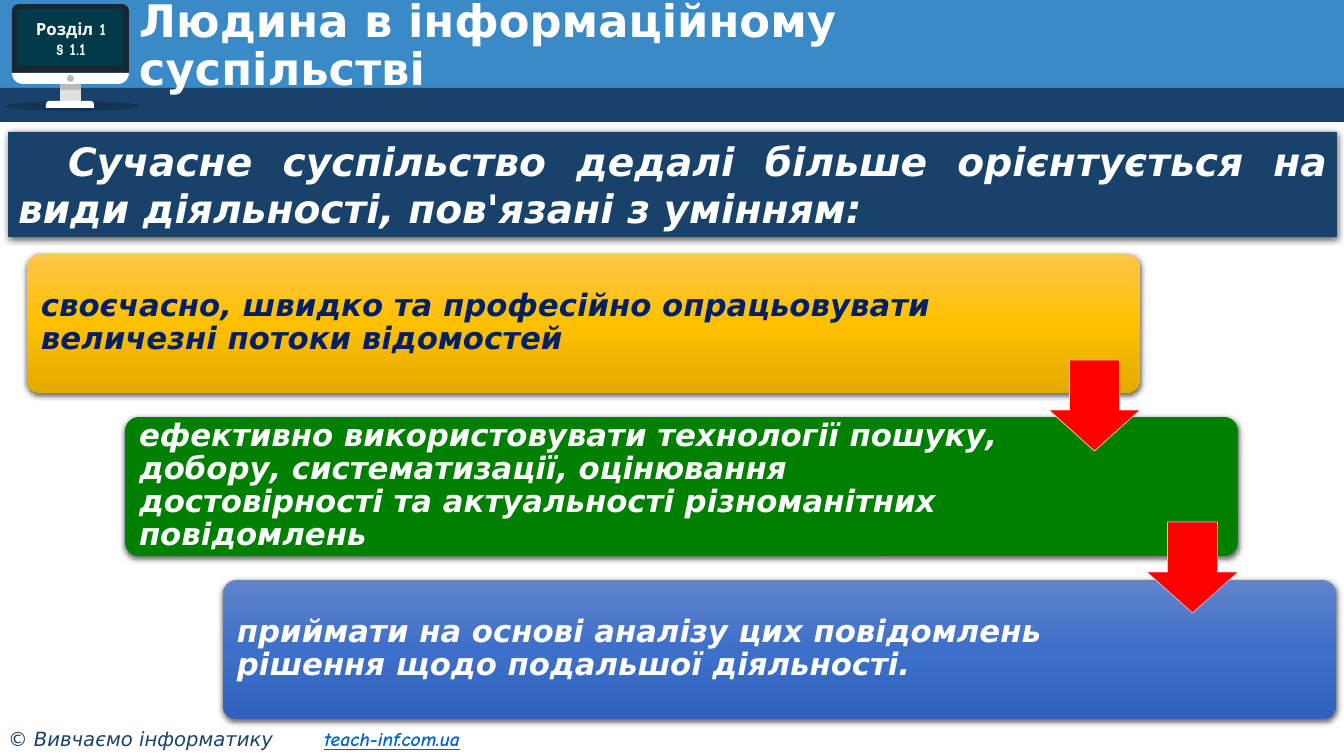
from math import cos, pi, sin

from lxml.etree import SubElement
from pptx import Presentation
from pptx.dml.color import RGBColor
from pptx.enum.shapes import MSO_SHAPE
from pptx.enum.text import MSO_ANCHOR, PP_ALIGN
from pptx.oxml.ns import qn
from pptx.util import Pt

PX = 9144000 / 1008
WIDTH, HEIGHT = 1344, 756

WHITE = RGBColor(0xFF, 0xFF, 0xFF)
BLACK = RGBColor(0x00, 0x00, 0x00)
SKY = RGBColor(0x39, 0x8A, 0xC7)
NAVY = RGBColor(0x19, 0x42, 0x6B)
INK = RGBColor(0x00, 0x20, 0x60)
BEZEL = RGBColor(0x18, 0x26, 0x32)
GLASS = RGBColor(0x00, 0x39, 0x48)
SILVER = RGBColor(0xE1, 0xE1, 0xE1)
GREY = RGBColor(0xBB, 0xBB, 0xBB)
LINK = RGBColor(0x05, 0x63, 0xC1)
GREEN = RGBColor(0x00, 0x80, 0x00)
RED = RGBColor(0xFF, 0x00, 0x00)
CREAM = RGBColor(0xFF, 0xE8, 0xCC)
MIST = RGBColor(0xCF, 0xD6, 0xEA)
GOLD = [RGBColor(0xFF, 0xC6, 0x4B), RGBColor(0xFF, 0xC0, 0x00), RGBColor(0xE3, 0xAB, 0x00)]
BLUE = [RGBColor(0x61, 0x83, 0xCB), RGBColor(0x3E, 0x70, 0xCA), RGBColor(0x30, 0x62, 0xBB)]


def px(length):
    return round(length * PX)


def add_alpha(color, percent):
    SubElement(color, qn("a:alpha"), val=str(percent * 1000))


def write(para, text, size, color, font="DejaVu Sans", bold=False, italic=False, underline=False):
    """Append one formatted span to a paragraph."""
    span = para.add_run()
    span.text = text
    span.font.name = font
    span.font.size = Pt(size)
    span.font.color.rgb = color
    span.font.bold = bold
    span.font.italic = italic
    span.font.underline = underline


class SlideBuilder:
    heading = dict(bold=True, color=WHITE)
    statement = dict(bold=True, italic=True)
    monitor_label = dict(size=12, color=WHITE, font="Comic Neue", bold=True)

    def __init__(self, page):
        self.page = page

    def shape(self, kind, left, top, width, height, fill, adjust=(), alpha=None):
        shape = self.page.shapes.add_shape(kind, px(left), px(top), px(width), px(height))
        for index, value in enumerate(adjust):
            shape.adjustments[index] = value
        self.paint(shape, fill)
        if alpha:
            add_alpha(shape._element.spPr.find(".//" + qn("a:srgbClr")), alpha)
        return shape

    def paint(self, shape, fill):
        """Fill with one colour, or with a gradient for a list of colours."""
        if isinstance(fill, list):
            self.gradient(shape, fill)
        else:
            shape.fill.solid()
            shape.fill.fore_color.rgb = fill
        shape.line.fill.background()
        shape.shadow.inherit = False

    def gradient(self, shape, colors):
        """Fill from top to bottom with evenly spaced colours."""
        shape.fill.gradient()
        shape.fill.gradient_angle = 270
        stops = shape._element.spPr.find(".//" + qn("a:gsLst"))
        for stop in list(stops):
            stops.remove(stop)
        for index, color in enumerate(colors):
            position = 100000 * index // (len(colors) - 1)
            stop = SubElement(stops, qn("a:gs"), pos=str(position))
            SubElement(stop, qn("a:srgbClr"), val=str(color))

    def drop_shadow(self, shape):
        effects = shape._element.spPr.find(qn("a:effectLst"))
        shadow = SubElement(effects, qn("a:outerShdw"), blurRad=str(Pt(4.5)), dist=str(Pt(1.5)),
                            dir="5400000", algn="ctr", rotWithShape="0")
        add_alpha(SubElement(shadow, qn("a:srgbClr"), val=str(BLACK)), 63)

    def frame(self, shape, anchor=MSO_ANCHOR.MIDDLE, insets=(10, 5, 10, 5), align=PP_ALIGN.LEFT):
        """Prepare the text frame and return its first paragraph."""
        frame = shape.text_frame
        frame.word_wrap = True
        frame.vertical_anchor = anchor
        (frame.margin_left, frame.margin_top,
         frame.margin_right, frame.margin_bottom) = map(px, insets)
        para = frame.paragraphs[0]
        para.alignment = align
        return para

    def text_box(self, left, top, width, height, **layout):
        box = self.page.shapes.add_textbox(px(left), px(top), px(width), px(height))
        return box, self.frame(box, **layout)

    def chin(self, left, top, width, radius):
        """Draw a bar whose lower corners are quarter circles of its full height."""
        angles = [step * pi / 16 for step in range(9)]
        right = left + width
        corners = [(right - radius + radius * cos(a), top + radius * sin(a)) for a in angles]
        corners += [(left + radius - radius * sin(a), top + radius * cos(a)) for a in angles]
        outline = self.page.shapes.build_freeform(px(left), px(top))
        outline.add_line_segments([(px(x), px(y)) for x, y in corners], close=True)
        self.paint(outline.convert_to_shape(), WHITE)

    def monitor(self, lines):
        rounded = MSO_SHAPE.ROUND_2_SAME_RECTANGLE
        self.shape(MSO_SHAPE.OVAL, 5, 101, 135, 10, BLACK, alpha=20)
        self.shape(rounded, 12, 4, 117, 69, BEZEL, (0.1, 0))
        self.chin(12, 73, 117, 11)
        self.shape(MSO_SHAPE.RECTANGLE, 60, 84, 21, 17, SILVER)
        self.shape(MSO_SHAPE.RECTANGLE, 60, 84, 21, 6, GREY)
        self.shape(rounded, 46, 101, 48, 7, WHITE, (0.5, 0))
        self.shape(MSO_SHAPE.OVAL, 67, 75, 7, 7, GREY)
        self.shape(MSO_SHAPE.ROUNDED_RECTANGLE, 17, 9, 106, 57, GLASS, (0.04,))
        box, para = self.text_box(13, 9, 116, 60, align=PP_ALIGN.CENTER)
        write(para, lines[0], **self.monitor_label)
        for line in lines[1:]:
            para = box.text_frame.add_paragraph()
            para.alignment = PP_ALIGN.CENTER
            write(para, line, **self.monitor_label)

    def title(self, text):
        para = self.text_box(129, 18, 998, 58)[1]
        para.line_spacing = 0.9
        write(para, text, size=32, **self.heading)

    def footer(self, owner, address):
        para = self.text_box(0, 722, 525, 34, anchor=MSO_ANCHOR.TOP, insets=(8, 5, 10, 5))[1]
        tabs = SubElement(para._p.get_or_add_pPr(), qn("a:tabLst"))
        SubElement(tabs, qn("a:tab"), pos=str(px(316)), algn="l")
        write(para, owner + "\t", 14, NAVY, italic=True)
        write(para, address, 14, LINK, font="Comic Neue", bold=True, italic=True, underline=True)

    def banner(self, text):
        banner = self.shape(MSO_SHAPE.RECTANGLE, 8, 132, 1329, 105, NAVY)
        self.drop_shadow(banner)
        para = self.frame(banner, anchor=MSO_ANCHOR.TOP, align=PP_ALIGN.JUSTIFY)
        para._p.get_or_add_pPr().set("indent", str(px(50)))
        write(para, text, 28, WHITE, **self.statement)

    def card(self, step, text, fill, color, right_inset):
        card = self.shape(MSO_SHAPE.ROUNDED_RECTANGLE, 27 + 98 * step, 254 + 163 * step,
                          1113, 139, fill, (0.1,))
        self.drop_shadow(card)
        para = self.frame(card, insets=(10, 9, right_inset, 10))
        para.line_spacing = 0.9
        write(para, text, 22, color, **self.statement)

    def arrow(self, step, outline):
        arrow = self.shape(MSO_SHAPE.DOWN_ARROW, 1049 + 98 * step, 360 + 162 * step,
                           91, 91, RED, (0.55, 0.45))
        arrow.line.color.rgb = outline
        arrow.line.width = Pt(0.5)
        add_alpha(arrow._element.spPr.find(qn("a:ln")).find(".//" + qn("a:srgbClr")), 90)


def main():
    deck = Presentation()
    deck.slide_width, deck.slide_height = px(WIDTH), px(HEIGHT)
    slide = SlideBuilder(deck.slides.add_slide(deck.slide_layouts[6]))

    slide.shape(MSO_SHAPE.RECTANGLE, 0, 0, WIDTH, 92, SKY)
    slide.shape(MSO_SHAPE.RECTANGLE, 0, 88, WIDTH, 34, NAVY)
    slide.monitor(["Розділ 1", "§ 1.1"])
    slide.footer("© Вивчаємо інформатику", "teach-inf.com.ua")
    slide.title("Людина в інформаційному суспільстві")
    slide.banner("Сучасне суспільство дедалі більше орієнтується на види діяльності, "
                 "пов'язані з умінням:")

    cards = [
        ("своєчасно, швидко та професійно опрацьовувати величезні потоки відомостей",
         GOLD, INK, 152),
        ("ефективно використовувати технології пошуку, добору, систематизації, оцінювання "
         "достовірності та актуальності різноманітних повідомлень", GREEN, WHITE, 199),
        ("приймати на основі аналізу цих повідомлень рішення щодо подальшої діяльності.",
         BLUE, WHITE, 199),
    ]
    for step, card in enumerate(cards):
        slide.card(step, *card)
    for step, outline in enumerate((CREAM, MIST)):
        slide.arrow(step, outline)

    deck.save("out.pptx")


if __name__ == "__main__":
    main()
